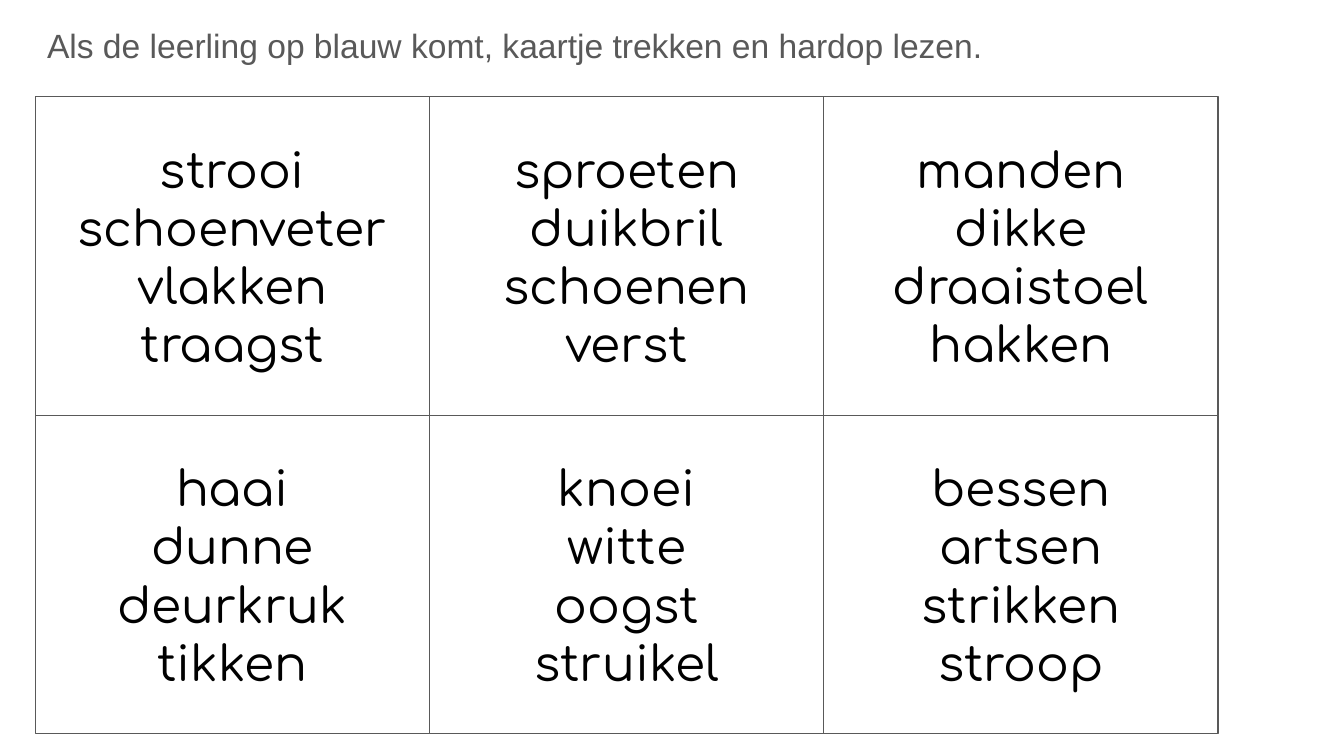
from pptx import Presentation
from pptx.dml.color import RGBColor
from pptx.enum import shapes, text
from pptx.util import Cm, Pt

WHITE = RGBColor(0xFF, 0xFF, 0xFF)
BLACK = RGBColor(0x00, 0x00, 0x00)
GREY = RGBColor(0x59, 0x59, 0x59)

CARD_WIDTH, CARD_HEIGHT = 7.45, 6.02
GRID_LEFT, GRID_TOP = 0.67, 1.83

WORD_ROWS = [
    [
        ["strooi", "schoenveter", "vlakken", "traagst"],
        ["sproeten", "duikbril", "schoenen", "verst"],
        ["manden", "dikke", "draaistoel", "hakken"],
    ],
    [
        ["haai", "dunne", "deurkruk", "tikken"],
        ["knoei", "witte", "oogst", "struikel"],
        ["bessen", "artsen", "strikken", "stroop"],
    ],
]


class CardSheet:
    instruction_font = "Arial"
    word_font = "Comfortaa"
    inset = Cm(0.25)

    def __init__(self, slide):
        self.slide = slide

    def set_lines(self, frame, lines, font, size, color, align):
        """Fill a text frame with one paragraph per line."""
        frame.word_wrap = True
        frame.margin_left = frame.margin_right = self.inset
        frame.margin_top = frame.margin_bottom = self.inset
        frame.text = "\n".join(lines)
        for paragraph in frame.paragraphs:
            paragraph.alignment = align
            for run in paragraph.runs:
                run.font.name = font
                run.font.size = Pt(size)
                run.font.color.rgb = color

    def instruction(self, sentence, left, top, width, height):
        box = self.slide.shapes.add_textbox(Cm(left), Cm(top), Cm(width), Cm(height))
        self.set_lines(box.text_frame, [sentence], self.instruction_font, 18, GREY,
                       text.PP_ALIGN.LEFT)

    def card(self, words, left, top):
        card = self.slide.shapes.add_shape(
            shapes.MSO_SHAPE.RECTANGLE,
            Cm(left), Cm(top), Cm(CARD_WIDTH), Cm(CARD_HEIGHT))
        card.shadow.inherit = False
        card.fill.solid()
        card.fill.fore_color.rgb = WHITE
        card.line.color.rgb = GREY
        card.line.width = Pt(0.75)
        card.text_frame.vertical_anchor = text.MSO_ANCHOR.MIDDLE
        self.set_lines(card.text_frame, words, self.word_font, 26, BLACK,
                       text.PP_ALIGN.CENTER)


def main():
    deck = Presentation()
    deck.slide_width, deck.slide_height = Cm(25.4), Cm(14.29)
    sheet = CardSheet(deck.slides.add_slide(deck.slide_layouts[6]))

    sheet.instruction(
        "Als de leerling op blauw komt, kaartje trekken en hardop lezen.",
        0.64, 0.23, 22.4, 1.37)
    for row, cards in enumerate(WORD_ROWS):
        for column, words in enumerate(cards):
            sheet.card(words, GRID_LEFT + column * CARD_WIDTH,
                       GRID_TOP + row * CARD_HEIGHT)

    deck.save("out.pptx")


if __name__ == "__main__":
    main()
